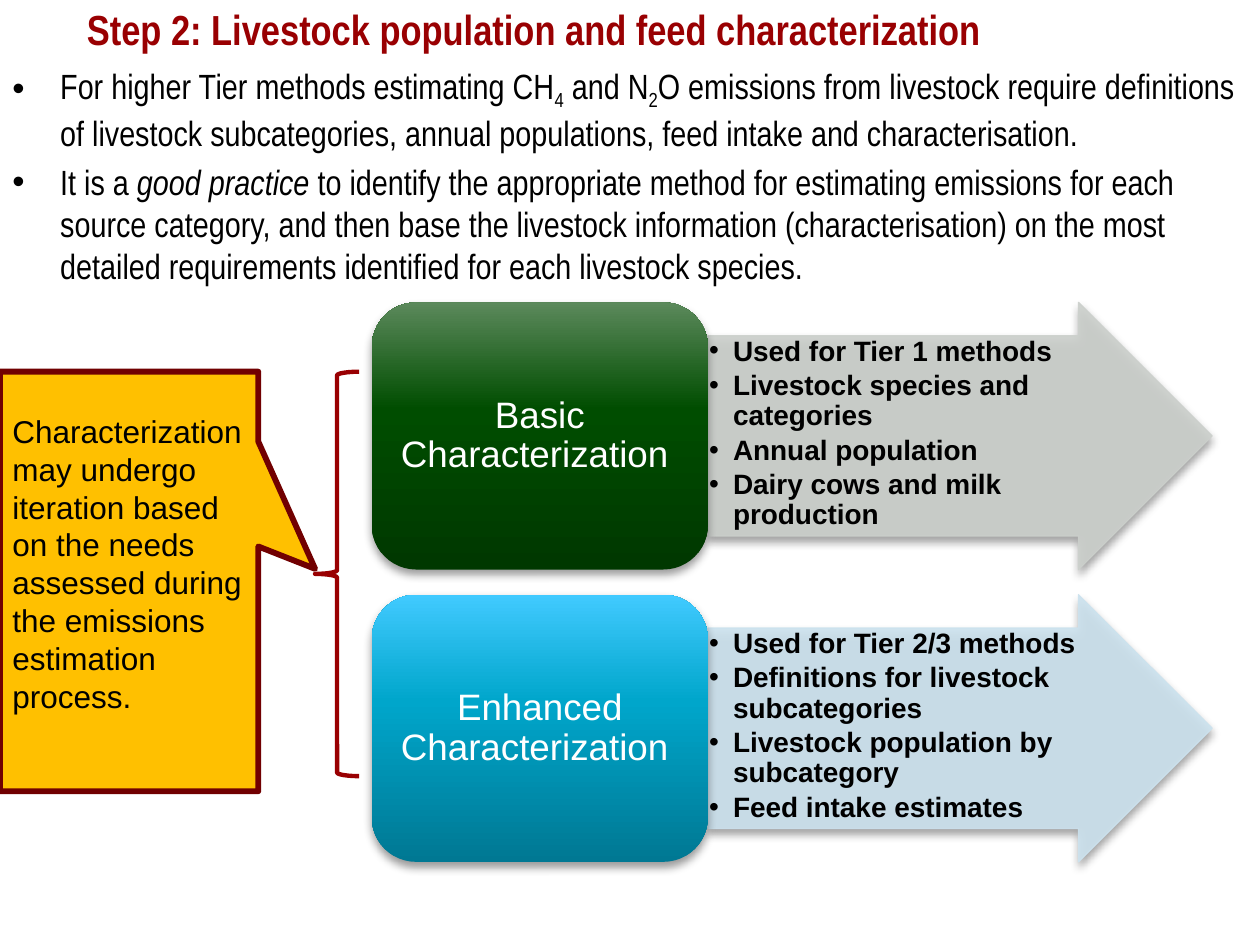
import copy

import pptx
import pptx.dml.color
import pptx.enum.shapes
import pptx.enum.text
import pptx.oxml.ns
import pptx.oxml.xmlchemy
import pptx.util
from pptx.util import Inches

RGB = pptx.dml.color.RGBColor
SHAPE = pptx.enum.shapes.MSO_SHAPE
ALIGN = pptx.enum.text.PP_ALIGN
ANCHOR = pptx.enum.text.MSO_ANCHOR
Pt = pptx.util.Pt
qn = pptx.oxml.ns.qn

BLACK = RGB(0x00, 0x00, 0x00)
WHITE = RGB(0xFF, 0xFF, 0xFF)
RED = RGB(0x99, 0x00, 0x02)
MAROON = RGB(0x71, 0x00, 0x01)
AMBER = RGB(0xFF, 0xC0, 0x00)
GREY = RGB(0xCC, 0xD0, 0xCC)
PALE_BLUE = RGB(0xCC, 0xE2, 0xEE)
GREENS = (RGB(0x00, 0x38, 0x00), RGB(0x00, 0x4D, 0x00), RGB(0x5B, 0x89, 0x5B))
BLUES = (RGB(0x00, 0x78, 0x93), RGB(0x00, 0xA6, 0xCB), RGB(0x41, 0xCA, 0xFF))

TITLE_FONT = {"name": "Arial Narrow", "size": Pt(24), "bold": True}
BODY_FONT = {"name": "Arial Narrow", "size": Pt(20)}
POINT_FONT = {"name": "Arial", "size": Pt(16), "bold": True}
LABEL_FONT = {"name": "Arial", "size": Pt(21)}
CALLOUT_FONT = {"name": "Arial", "size": Pt(18)}

INTRODUCTION = [
    [("For higher Tier methods estimating CH", ""), ("4", "sub"), (" and N", ""),
     ("2", "sub"),
     ("O emissions from livestock require definitions of livestock subcategories, "
      "annual populations, feed intake and characterisation.", "")],
    [("It is a", ""), (" good practice ", "italic"),
     ("to identify the appropriate method for estimating emissions for each source "
      "category, and then base the livestock information (characterisation) on the "
      "most detailed requirements identified for each livestock species.", "")],
]
LEVELS = [
    ("Basic Characterization ", GREENS, GREY,
     ["Used for Tier 1 methods", "Livestock species and categories",
      "Annual population", "Dairy cows and milk production"]),
    ("Enhanced Characterization ", BLUES, PALE_BLUE,
     ["Used for Tier 2/3 methods", "Definitions for livestock subcategories",
      "Livestock population by subcategory", "Feed intake estimates"]),
]


def set_values(target, values):
    for name, value in values.items():
        setattr(target, name, value)


def add_run(paragraph, text, font, color):
    run = paragraph.add_run()
    run.text = text
    set_values(run.font, font)
    run.font.color.rgb = color
    return run


def set_frame(frame, insets, anchor):
    """Wrap the text, with insets in inches as left, top, right, bottom."""
    sides = ("margin_left", "margin_top", "margin_right", "margin_bottom")
    set_values(frame, dict(zip(sides, map(Inches, insets))))
    set_values(frame, {"word_wrap": True, "vertical_anchor": anchor,
                       "auto_size": pptx.enum.text.MSO_AUTO_SIZE.NONE})


def add_bullet(paragraph, indent):
    properties = paragraph._p.get_or_add_pPr()
    properties.set("marL", str(Inches(indent)))
    properties.set("indent", str(-Inches(indent)))
    for tag, attribute, value in (("buFont", "typeface", "Arial"), ("buChar", "char", "•")):
        bullet = pptx.oxml.xmlchemy.OxmlElement("a:" + tag)
        bullet.set(attribute, value)
        properties.append(bullet)


def paragraphs(frame, count):
    return [frame.paragraphs[0]] + [frame.add_paragraph() for _ in range(count - 1)]


def add_text_frame(slide, left, top, width, height, insets):
    box = slide.shapes.add_textbox(
        Inches(left), Inches(top), Inches(width), Inches(height))
    set_frame(box.text_frame, insets, ANCHOR.TOP)
    return box.text_frame


def add_flat_shape(slide, kind, left, top, width, height):
    shape = slide.shapes.add_shape(
        kind, Inches(left), Inches(top), Inches(width), Inches(height))
    shape.shadow.inherit = False
    return shape


def set_line(shape, color, width):
    shape.line.color.rgb = color
    shape.line.width = Pt(width)


def add_shadow(shape):
    effects = shape._element.spPr.find(qn("a:effectLst"))
    shadow = pptx.oxml.xmlchemy.OxmlElement("a:outerShdw")
    for name, value in {"blurRad": Pt(5.2), "dist": Pt(3), "dir": 90 * 60000,
                        "rotWithShape": 0}.items():
        shadow.set(name, str(value))
    color = pptx.oxml.xmlchemy.OxmlElement("a:srgbClr")
    color.set("val", "000000")
    shadow.append(color)
    effects.append(shadow)
    set_alpha(color, 40)


def set_alpha(color, percent):
    alpha = pptx.oxml.xmlchemy.OxmlElement("a:alpha")
    alpha.set("val", str(percent * 1000))
    color.append(alpha)


def fill_gradient(shape, colors):
    """Blend three colours from the bottom edge to the top."""
    shape.fill.gradient()
    shape.fill.gradient_angle = 90
    stop_list = shape._element.spPr.find(qn("a:gradFill")).find(qn("a:gsLst"))
    stop_list.insert(1, copy.deepcopy(stop_list[0]))
    for stop, position, color in zip(shape.fill.gradient_stops, (0, 0.6, 1), colors):
        stop.position = position
        stop.color.rgb = color


def place_title(slide, left, top, width, height):
    title = slide.shapes.title
    set_values(title, {"left": Inches(left), "top": Inches(top),
                       "width": Inches(width), "height": Inches(height)})
    set_frame(title.text_frame, (0.1, 0.05, 0.1, 0.05), ANCHOR.MIDDLE)
    paragraph = title.text_frame.paragraphs[0]
    paragraph.alignment = ALIGN.LEFT
    add_run(paragraph, "Step 2: Livestock population and feed characterization",
            TITLE_FONT, RED)


def add_introduction(slide, left, top, width, height):
    frame = add_text_frame(slide, left, top, width, height, (0.1, 0.05, 0.1, 0.05))
    lines = paragraphs(frame, len(INTRODUCTION))
    for index, (paragraph, pieces) in enumerate(zip(lines, INTRODUCTION)):
        add_bullet(paragraph, 0.38)
        paragraph.space_before = Pt(4 if index else 0)
        for text, style in pieces:
            run = add_run(paragraph, text, BODY_FONT, BLACK)
            run.font.italic = style == "italic"
            if style == "sub":
                run.font._element.set("baseline", "-25000")


def add_level(slide, left, top, width, height, level):
    """Place a labelled block with an arrow of bullet points to its right."""
    label, gradient, arrow_color, points = level
    block_width = 0.4 * width
    arrow_left, arrow_width = left + block_width, width - block_width
    arrow = add_flat_shape(slide, SHAPE.RIGHT_ARROW, arrow_left, top, arrow_width, height)
    arrow.adjustments[0] = 0.75
    arrow.fill.solid()
    arrow.fill.fore_color.rgb = arrow_color
    set_line(arrow, arrow_color, 0.75)
    for color in arrow._element.spPr.iter(qn("a:srgbClr")):
        set_alpha(color, 90)
    add_shadow(arrow)
    frame = add_text_frame(slide, arrow_left, top + height / 8, 0.8 * arrow_width,
                           0.75 * height, (0.01, 0.01, 0.01, 0.01))
    for paragraph, point in zip(paragraphs(frame, len(points)), points):
        add_bullet(paragraph, 0.19)
        set_values(paragraph, {"line_spacing": 0.9, "space_after": Pt(2.4)})
        add_run(paragraph, point, POINT_FONT, BLACK)

    block = add_flat_shape(slide, SHAPE.ROUNDED_RECTANGLE, left, top, block_width, height)
    fill_gradient(block, gradient)
    block.line.fill.background()
    add_shadow(block)
    set_frame(block.text_frame, (0.09, 0.04, 0.09, 0.04), ANCHOR.MIDDLE)
    paragraph = block.text_frame.paragraphs[0]
    set_values(paragraph, {"alignment": ALIGN.CENTER, "line_spacing": 0.9})
    add_run(paragraph, label, LABEL_FONT, WHITE)


def add_callout(slide, left, top, width, height):
    callout = add_flat_shape(slide, SHAPE.RECTANGULAR_CALLOUT, left, top, width, height)
    callout.adjustments[0], callout.adjustments[1] = 0.72, -0.03
    callout.fill.solid()
    callout.fill.fore_color.rgb = AMBER
    set_line(callout, MAROON, 3.35)
    set_frame(callout.text_frame, (0.1, 0.05, 0.1, 0.34), ANCHOR.MIDDLE)
    paragraph = callout.text_frame.paragraphs[0]
    paragraph.alignment = ALIGN.LEFT
    add_run(paragraph, "Characterization may undergo iteration based on the needs "
            "assessed during the emissions estimation process.", CALLOUT_FONT, BLACK)


def add_brace(slide, left, top, width, height):
    brace = add_flat_shape(slide, SHAPE.LEFT_BRACE, left, top, width, height)
    brace.fill.background()
    set_line(brace, RED, 2.5)


def main():
    presentation = pptx.Presentation()
    presentation.slide_width, presentation.slide_height = Inches(10), Inches(7.5)
    slide = presentation.slides.add_slide(presentation.slide_layouts[5])
    place_title(slide, 0.59, 0, 9.03, 0.46)
    add_introduction(slide, 0, 0.46, 9.9, 7.04)
    for index, level in enumerate(LEVELS):
        add_level(slide, 2.95, 2.4 + 2.32 * index, 6.67, 2.12, level)
    add_callout(slide, 0, 2.95, 2.05, 3.33)
    add_brace(slide, 2.5, 2.95, 0.35, 3.21)
    presentation.save("out.pptx")


if __name__ == "__main__":
    main()
